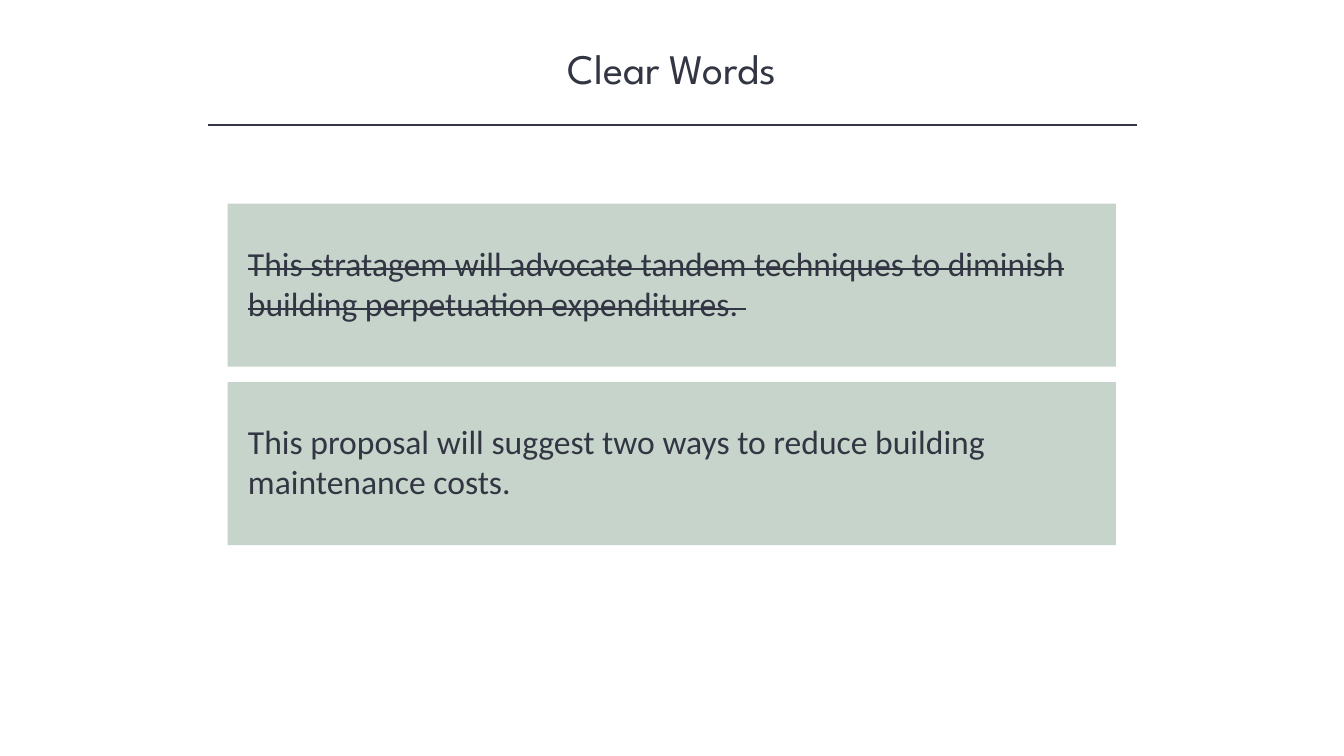
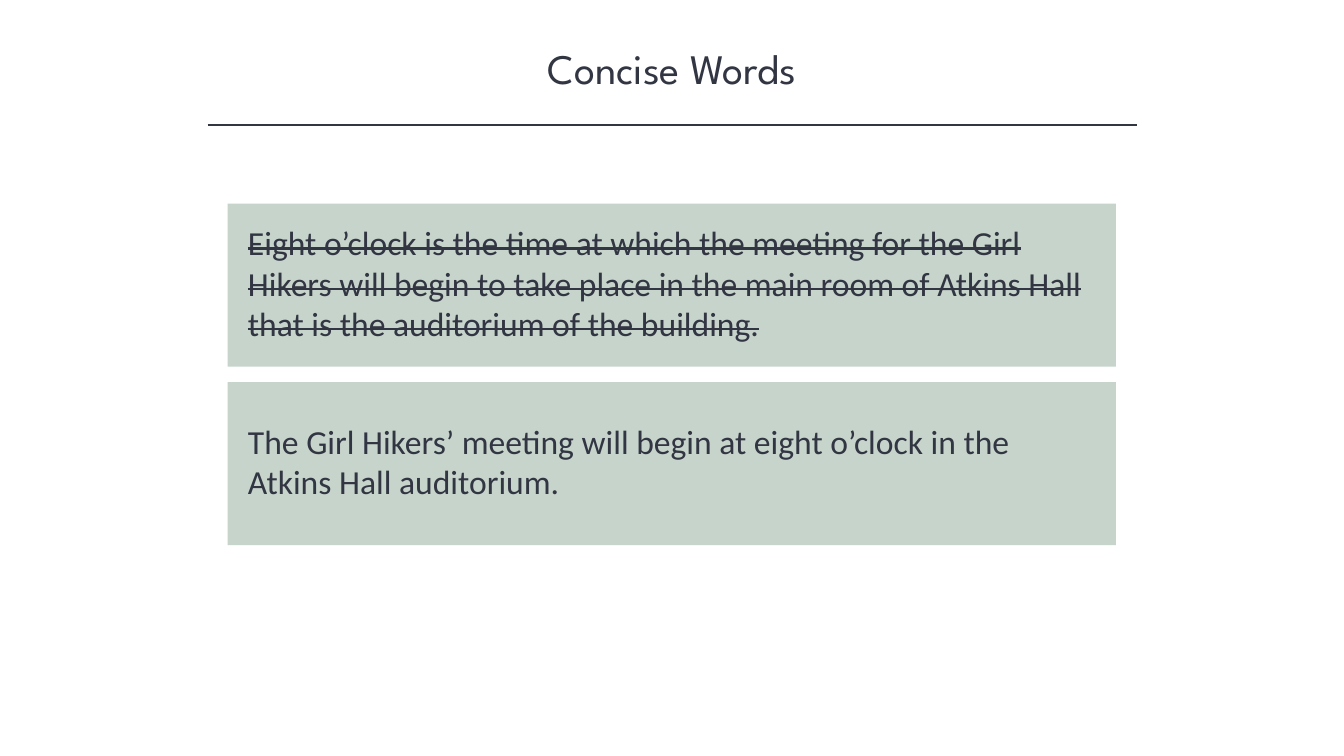
from pptx import Presentation
from pptx.dml.color import RGBColor
from pptx.enum.shapes import MSO_CONNECTOR as Link, MSO_SHAPE as Form
from pptx.enum.text import MSO_ANCHOR as Anchor, MSO_AUTO_SIZE as Fit, PP_ALIGN as Align
from pptx.oxml.ns import qn
from pptx.util import Cm, Pt
from lxml.etree import SubElement

INK, SAGE = "323542", "C7D4CB"
WIDE, HIGH = 33.87, 19.05
HEAD = (4.24, 0.94, 25.4, 1.55)
RULE = (5.23, 3.15, 23.42)
BODY = (5.74, 5.13, 22.38, 8.61)
GAP = 0.39

TITLE_FONT = {"name": "League Spartan", "size": Pt(30), "bold": False}
TEXT_FONT = {"name": "Calibri", "size": Pt(24)}
TITLE_FRAME = {"word_wrap": True, "auto_size": Fit.NONE, "vertical_anchor": Anchor.TOP}
PANEL_FRAME = {
    "word_wrap": True, "vertical_anchor": Anchor.MIDDLE,
    "margin_left": Cm(0.51), "margin_right": Cm(0.68),
    "margin_top": Cm(0.13), "margin_bottom": Cm(0.25),
}

PAGES = [
    ("Clear Words",
     "This stratagem will advocate tandem techniques to diminish building "
     "perpetuation expenditures. ",
     "This proposal will suggest two ways to reduce building maintenance costs."),
    ("Concise Words",
     "Eight o’clock is the time at which the meeting for the Girl Hikers will begin "
     "to take place in the main room of Atkins Hall that is the auditorium of the building.",
     "The Girl Hikers’ meeting will begin at eight o’clock in the Atkins Hall auditorium."),
]


def color(code):
    return RGBColor.from_string(code)


def style(item, values):
    for name, value in values.items():
        setattr(item, name, value)


def write(frame, text, form, font, align, strike=False):
    style(frame, form)
    para = frame.paragraphs[0]
    para.alignment = align
    run = para.add_run()
    run.text = text
    style(run.font, font)
    run.font.color.rgb = color(INK)
    if strike:
        run._r.get_or_add_rPr().set("strike", "sngStrike")


def add_title(slide, text, box):
    title = slide.shapes.title
    style(title, dict(zip(("left", "top", "width", "height"), map(Cm, box))))
    write(title.text_frame, text, TITLE_FRAME, TITLE_FONT, Align.CENTER)


def add_rule(slide, left, top, width):
    rule = slide.shapes.add_connector(
        Link.STRAIGHT, Cm(left), Cm(top), Cm(left + width), Cm(top))
    rule.line.color.rgb = color(INK)
    rule.line.width = Pt(1)
    SubElement(rule._element.spPr, qn("a:effectLst"))


def add_panel(slide, text, box, strike):
    panel = slide.shapes.add_shape(Form.RECTANGLE, *map(Cm, box))
    panel.shadow.inherit = False
    panel.fill.solid()
    panel.fill.fore_color.rgb = color(SAGE)
    panel.line.fill.background()
    write(panel.text_frame, text, PANEL_FRAME, TEXT_FONT, Align.LEFT, strike)


def add_pair(slide, texts, box):
    left, top, width, height = box
    tall = (height - GAP * (len(texts) - 1)) / len(texts)
    for row, text in enumerate(texts):
        place = (left, top + row * (tall + GAP), width, tall)
        add_panel(slide, text, place, strike=row == 0)


def add_page(deck, title, *texts):
    slide = deck.slides.add_slide(deck.slide_layouts.get_by_name("Title Only"))
    add_title(slide, title, HEAD)
    add_rule(slide, *RULE)
    add_pair(slide, texts, BODY)


def main():
    deck = Presentation()
    style(deck, {"slide_width": Cm(WIDE), "slide_height": Cm(HIGH)})
    for page in PAGES:
        add_page(deck, *page)
    deck.save("out.pptx")


if __name__ == "__main__":
    main()
